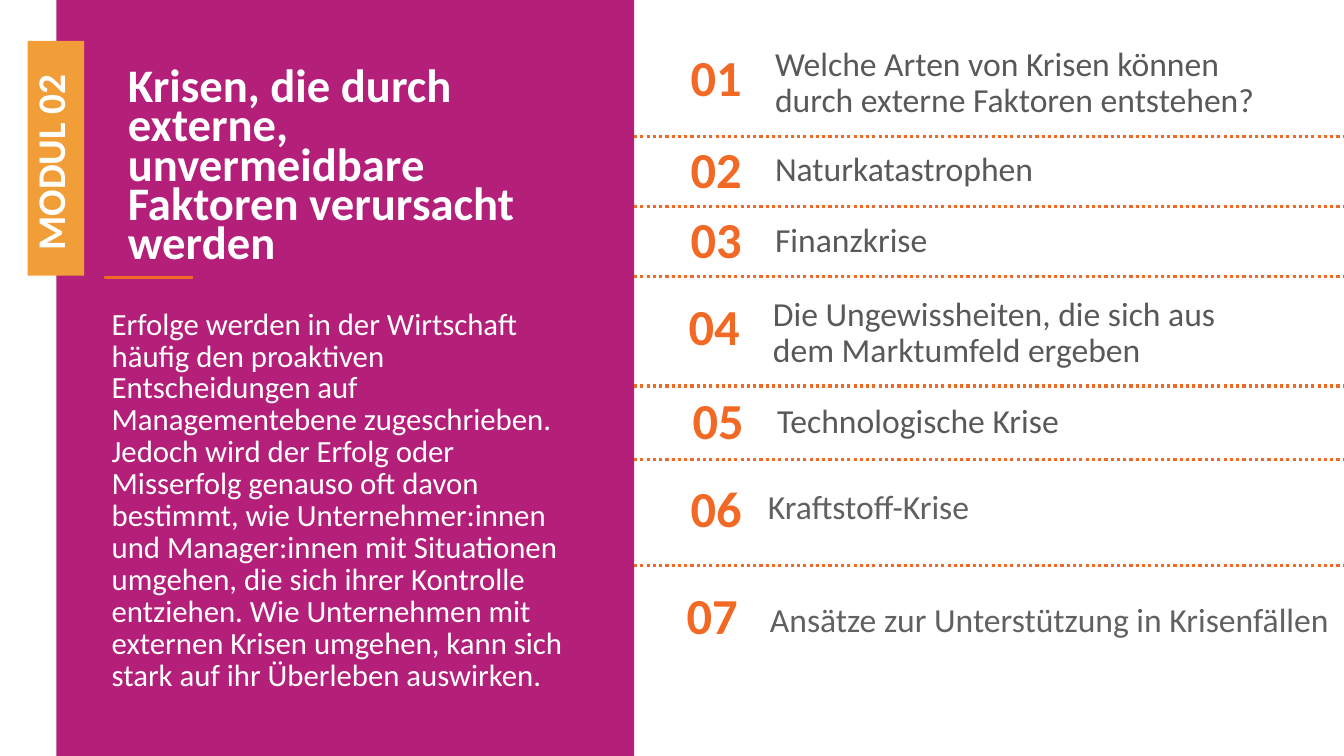
from dataclasses import dataclass

from lxml import etree
from pptx import Presentation
from pptx.dml.color import RGBColor
from pptx.enum.dml import MSO_LINE_DASH_STYLE as DASH
from pptx.enum.shapes import MSO_CONNECTOR as CONN, MSO_SHAPE as SHAPE
from pptx.enum.text import MSO_ANCHOR as ANCHOR, PP_ALIGN as ALIGN
from pptx.oxml.ns import qn
from pptx.util import Inches, Pt

COLUMNS, ROWS = 160, 90


@dataclass(frozen=True)
class Theme:
    font: str = "Calibri"
    magenta: str = "B41F7A"
    orange: str = "F16924"
    amber: str = "F29E38"
    white: str = "FFFFFF"
    grey: str = "595959"
    light_grey: str = "616161"
    title: float = 33.3
    body: float = 22
    tag: float = 28
    number: float = 36
    topic: float = 24


class Deck:
    """Places elements on a grid of 160 columns and 90 rows."""

    def __init__(self, theme):
        self.theme = theme
        self.prs = Presentation()
        self.prs.slide_width = Inches(13.33)
        self.prs.slide_height = Inches(7.5)
        self.s = self.prs.slides.add_slide(self.prs.slide_layouts[6])

    def grid(self, *lengths):
        units = (self.prs.slide_width / COLUMNS, self.prs.slide_height / ROWS)
        return [round(v * units[i % 2]) for i, v in enumerate(lengths)]

    def label(self, sp, text, size, color, bold=False, spacing=1.0,
              align=ALIGN.LEFT, anchor=ANCHOR.MIDDLE, wrap=True):
        tf = sp.text_frame
        tf.word_wrap = wrap
        tf.vertical_anchor = anchor
        p = tf.paragraphs[0]
        p.text = text
        p.alignment = align
        p.line_spacing = spacing
        p.font.name = self.theme.font
        p.font.size = Pt(size)
        p.font.bold = bold
        p.font.color.rgb = RGBColor.from_string(color)
        return p

    def text(self, box, *args, **kwargs):
        sp = self.s.shapes.add_textbox(*self.grid(*box))
        return self.label(sp, *args, **kwargs)

    def rect(self, box, fill, line_width=None):
        sp = self.s.shapes.add_shape(SHAPE.RECTANGLE, *self.grid(*box))
        sp.shadow.inherit = False
        sp.fill.solid()
        sp.fill.fore_color.rgb = RGBColor.from_string(fill)
        if line_width:
            sp.line.color.rgb = RGBColor.from_string(fill)
            sp.line.width = Pt(line_width)
        else:
            sp.line.fill.background()
        return sp

    def dotted_rule(self, left, right, row):
        ends = self.grid(left, row, right, row)
        c = self.s.shapes.add_connector(CONN.STRAIGHT, *ends)
        c.line.color.rgb = RGBColor.from_string(self.theme.orange)
        c.line.width = Pt(2.25)
        c.line.dash_style = DASH.ROUND_DOT
        etree.SubElement(c._element.spPr, qn("a:effectLst"))


TITLE = "Krisen, die durch externe, unvermeidbare Faktoren verursacht werden"
INTRO = (
    "Erfolge werden in der Wirtschaft häufig den proaktiven Entscheidungen "
    "auf Managementebene zugeschrieben. Jedoch wird der Erfolg oder "
    "Misserfolg genauso oft davon bestimmt, wie Unternehmer:innen und "
    "Manager:innen mit Situationen umgehen, die sich ihrer Kontrolle "
    "entziehen. Wie Unternehmen mit externen Krisen umgehen, kann sich "
    "stark auf ihr Überleben auswirken."
)
PANEL_LEFT, PANEL_RIGHT = 6.72, 75.48

# Topic, number's column and row, topic's column, row and height, rule's row
TOPICS = [
    ("Welche Arten von Krisen können durch externe Faktoren entstehen?",
     79.8, 5.4, 91.08, 4.56, 10.8, 16.2),
    ("Naturkatastrophen", 79.8, 16.32, 91.08, 16.2, 8.28, 24.6),
    ("Finanzkrise", 79.8, 24.72, 91.08, 24.6, 8.28, 32.88),
    ("Die Ungewissheiten, die sich aus dem Marktumfeld ergeben",
     79.56, 35.04, 90.84, 34.32, 10.8, 45.96),
    ("Technologische Krise", 80.04, 46.2, 91.32, 46.2, 8.28, 54.72),
    ("Kraftstoff-Krise", 79.8, 56.76, 90.24, 57.24, 6, 67.32),
    ("Ansätze zur Unterstützung in Krisenfällen",
     79.32, 69.48, 90.48, 70.68, 6, None),
]
FIRST_LOOSE = 6  # topics from here on are single, unwrapped lines


def main():
    t = Theme()
    deck = Deck(t)

    # Left panel with title and introduction
    deck.rect((PANEL_LEFT, 0, PANEL_RIGHT - PANEL_LEFT, ROWS), t.magenta)
    deck.text((14.04, 7.92, 57.48, 26.52), TITLE, t.title, t.white,
              bold=True, spacing=0.7, anchor=ANCHOR.TOP)
    deck.rect((12.48, 32.88, 10.44, 0.24), t.orange, line_width=1)
    deck.text((12.12, 36.24, 56.52, 36.36), INTRO, t.body, t.white,
              spacing=Pt(22.8), anchor=ANCHOR.TOP)

    # Module tag, read upwards
    tag = deck.rect((-7.32, 15.48, 27.96, 6.72), t.amber)
    tag.rotation = 270
    p = deck.label(tag, "MODUL 02", t.tag, t.white, bold=True,
                   spacing=Pt(24.4))
    p._p.get_or_add_pPr().set("marL", str(Inches(0.15)))

    # Numbered topics with dotted rules between them
    for n, (topic, nx, ny, x, y, height, rule) in enumerate(TOPICS, 1):
        loose = n >= FIRST_LOOSE
        deck.text((nx, ny, 10.92, 8.28), f"{n:02}", t.number, t.orange,
                  bold=True, spacing=0.9, align=ALIGN.CENTER)
        deck.text((x, y, COLUMNS - x if loose else 62.4, height), topic,
                  t.topic, t.light_grey if loose else t.grey,
                  spacing=1.0 if loose else 0.9, wrap=not loose)
        if rule:
            deck.dotted_rule(PANEL_RIGHT, COLUMNS, rule)

    deck.prs.save("out.pptx")


if __name__ == "__main__":
    main()
